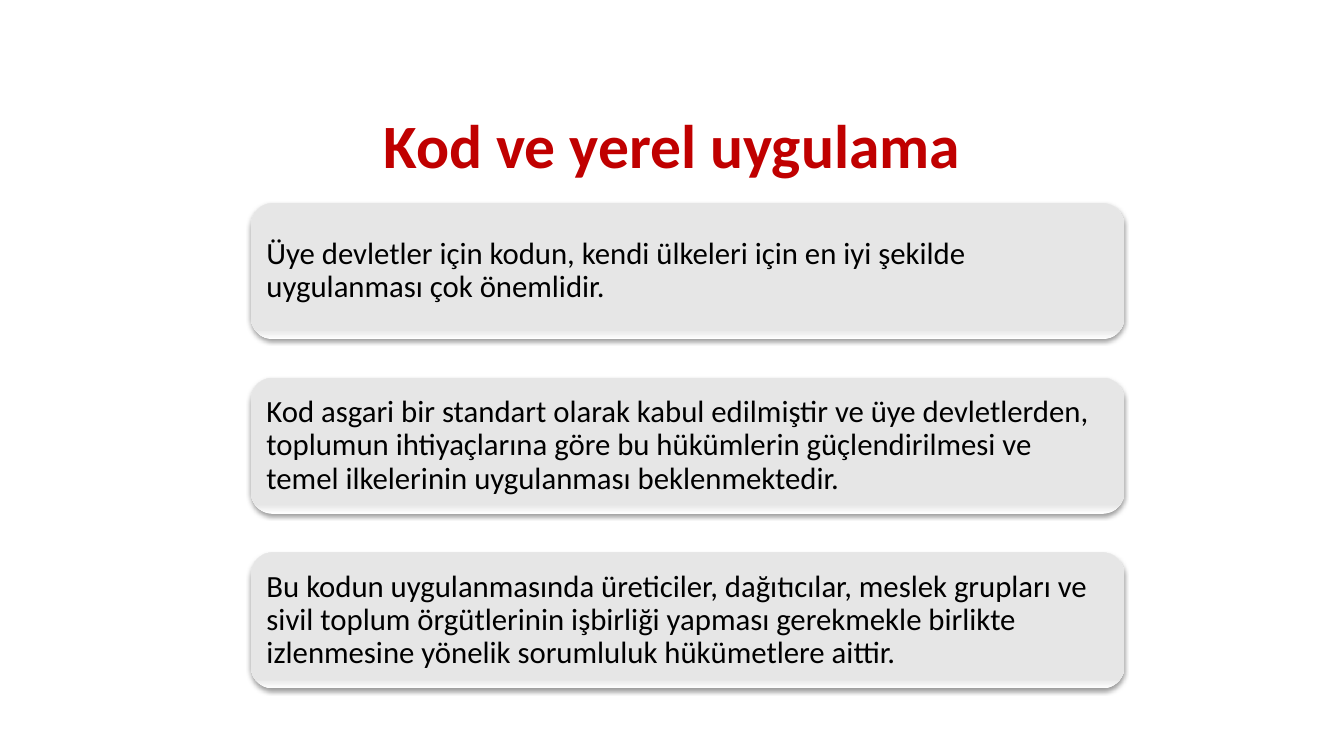
"""Build the slide on the Code and its local application."""
from lxml import etree
from pptx import Presentation
from pptx.dml.color import RGBColor
from pptx.enum.shapes import MSO_SHAPE
from pptx.enum.text import MSO_ANCHOR, PP_ALIGN
from pptx.oxml.ns import qn
from pptx.util import Cm, Pt

ROUNDED = MSO_SHAPE.ROUNDED_RECTANGLE
MIDDLE = MSO_ANCHOR.MIDDLE
CENTER, LEFT = PP_ALIGN.CENTER, PP_ALIGN.LEFT

COLORS = {"title": "C00000", "text": "000000", "edge": "FFFFFF",
          "card": "E6E6E6", "shadow": "000000"}
TITLE_FONT = {"name": "Calibri", "size": Pt(44), "bold": True}
CARD_FONT = {"name": "Calibri", "size": Pt(22), "bold": False}
STATEMENTS = [
    "Üye devletler için kodun, kendi ülkeleri için en iyi şekilde "
    "uygulanması çok önemlidir.",
    "Kod asgari bir standart olarak kabul edilmiştir ve üye devletlerden, "
    "toplumun ihtiyaçlarına göre bu hükümlerin güçlendirilmesi ve temel "
    "ilkelerinin uygulanması beklenmektedir.",
    "Bu kodun uygulanmasında üreticiler, dağıtıcılar, meslek grupları ve "
    "sivil toplum örgütlerinin işbirliği yapması gerekmekle birlikte "
    "izlenmesine yönelik sorumluluk hükümetlere aittir.",
]
CARD_TOP, CARD_PITCH = 5.12, 4.4


def write_text(box, text, font, color, alignment, spacing):
    """Fill a box with one formatted, vertically centred paragraph."""
    frame = box.text_frame
    frame.word_wrap = True
    frame.vertical_anchor = MIDDLE
    para = frame.paragraphs[0]
    para.alignment = alignment
    para.line_spacing = spacing
    span = para.add_run()
    span.text = text
    for name, value in font.items():
        setattr(span.font, name, value)
    span.font.color.rgb = RGBColor.from_string(COLORS[color])


def add_shadow(shape):
    """Give a shape a soft shadow that falls straight down."""
    shape.shadow.inherit = False
    effects = shape.element.spPr.find(qn("a:effectLst"))
    shadow = etree.SubElement(effects, qn("a:outerShdw"), blurRad=str(Pt(3.1)),
                              dist=str(Pt(1.6)), dir="5400000", rotWithShape="0")
    color = etree.SubElement(shadow, qn("a:srgbClr"), val=COLORS["shadow"])
    etree.SubElement(color, qn("a:alpha"), val="38000")


deck = Presentation()
deck.slide_width, deck.slide_height = Cm(33.87), Cm(19.05)
page = deck.slides.add_slide(deck.slide_layouts[6])

title = page.shapes.add_textbox(Cm(1.7), Cm(2.03), Cm(30.48), Cm(3.18))
write_text(title, "Kod ve yerel uygulama", TITLE_FONT, "title", CENTER, 1.0)

for index, statement in enumerate(STATEMENTS):
    card = page.shapes.add_shape(ROUNDED, Cm(6.32), Cm(CARD_TOP + index * CARD_PITCH),
                                 Cm(22.02), Cm(3.43))
    card.line.fill.background()
    card.fill.gradient()
    card.fill.gradient_angle = 90
    for stop, position, color in zip(card.fill.gradient_stops, (0, 0.07), ("edge", "card")):
        stop.position = position
        stop.color.rgb = RGBColor.from_string(COLORS[color])
    add_shadow(card)
    for side in ("left", "top", "right", "bottom"):
        setattr(card.text_frame, f"margin_{side}", Cm(0.23))
    write_text(card, statement, CARD_FONT, "text", LEFT, 0.9)

deck.save("out.pptx")
